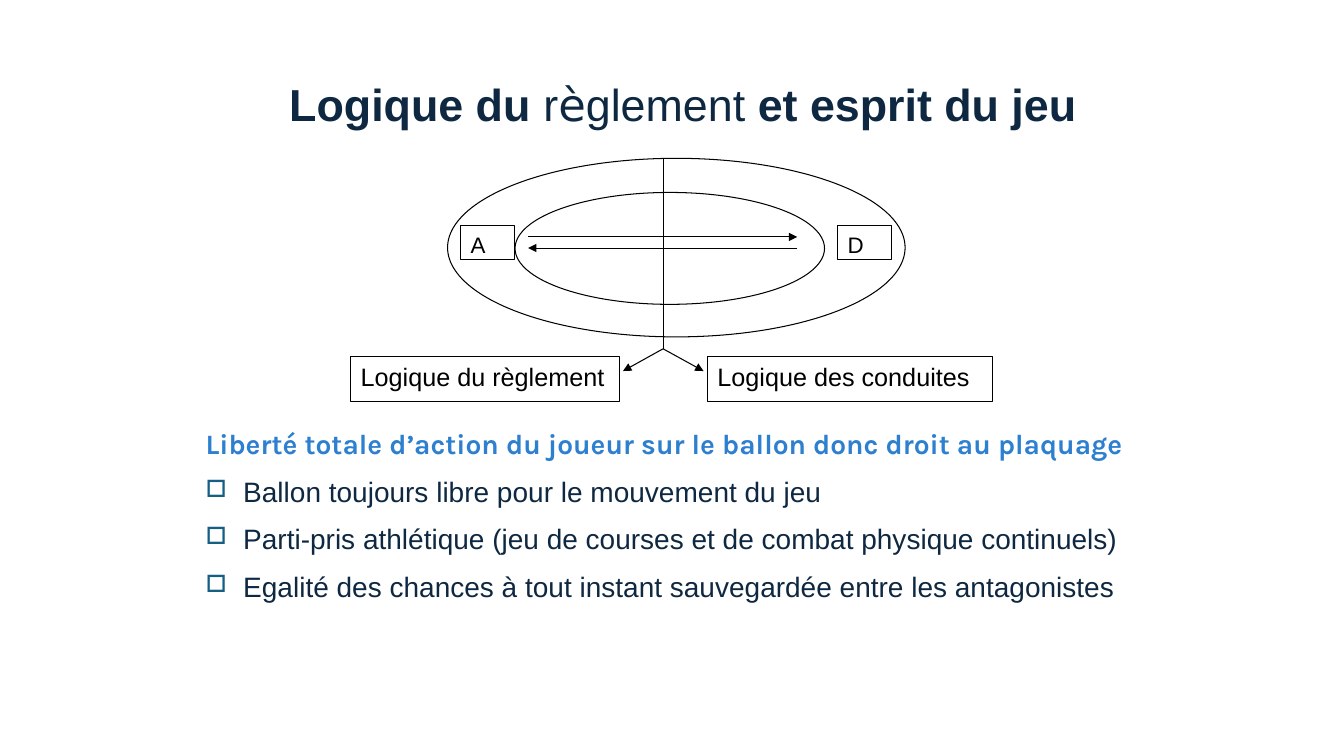
"""Build the slide on the logic of the rules and the spirit of the game."""
import dataclasses
import typing

import lxml.etree
import pptx
import pptx.dml.color
import pptx.enum.shapes
import pptx.oxml.ns
import pptx.util

Cm = pptx.util.Cm
Pt = pptx.util.Pt
RGB = pptx.dml.color.RGBColor
qn = pptx.oxml.ns.qn
SHAPE = pptx.enum.shapes.MSO_SHAPE


@dataclasses.dataclass(frozen=True)
class Theme:
    """Colours, fonts and type sizes of the slide."""
    ink: RGB = RGB(0x0E, 0x28, 0x41)
    accent: RGB = RGB(0x2D, 0x7F, 0xCF)
    bullet: str = "156082"
    black: RGB = RGB(0, 0, 0)
    body_font: str = "Arial"
    heading_font: str = "Karla"
    accent_font: str = "DejaVu Sans"
    title: int = 32
    body: int = 20
    label: int = 18
    letter: int = 16
    line: float = 0.75


THEME = Theme()


class Box(typing.NamedTuple):
    """Place and size in centimetres."""
    left: float
    top: float
    width: float
    height: float


@dataclasses.dataclass(frozen=True)
class Run:
    """A piece of text in one style."""
    text: str
    size: int = THEME.body
    color: RGB = THEME.ink
    font: str = THEME.body_font
    bold: bool = False


@dataclasses.dataclass(frozen=True)
class Outline:
    """An outlined shape, with a label if it has one."""
    box: Box
    kind: SHAPE = SHAPE.RECTANGLE
    label: str = ""
    size: int = THEME.label


class Stroke(typing.NamedTuple):
    """A straight line, with an arrowhead at its end if wanted."""
    x1: float
    y1: float
    x2: float
    y2: float
    arrow: bool = True


@dataclasses.dataclass(frozen=True)
class Statement:
    """A line of the text below the diagram."""
    run: Run
    bulleted: bool = True


JUNCTION_X, JUNCTION_Y = 16.71, 8.79
ARM_Y = 9.35
FIELD_TOP = 3.99
LETTER_TOP = 5.69
LABEL_TOP = 8.99
PASS_LEFT, PASS_RIGHT = 13.31, 20.09
STATEMENTS_TOP, STATEMENT_PITCH = 10.72, 1.2

TITLE = [
    Run("Logique du ", THEME.title, bold=True),
    Run("r", THEME.title),
    Run("è", THEME.title, font=THEME.accent_font),
    Run("glement", THEME.title),
    Run(" et esprit du jeu", THEME.title, bold=True),
]

OUTLINES = [
    Outline(Box(11.28, FIELD_TOP, 11.53, 4.5), SHAPE.OVAL),
    Outline(Box(12.98, 4.85, 7.8, 2.82), SHAPE.OVAL),
    Outline(Box(11.61, LETTER_TOP, 1.35, 0.84), label="A", size=THEME.letter),
    Outline(Box(21.11, LETTER_TOP, 1.35, 0.84), label="D", size=THEME.letter),
    Outline(Box(8.84, LABEL_TOP, 6.78, 1.12), label="Logique du règlement"),
    Outline(Box(17.83, LABEL_TOP, 7.19, 1.12), label="Logique des conduites"),
]

STROKES = [
    Stroke(PASS_LEFT, 5.97, PASS_RIGHT, 5.97),
    Stroke(PASS_RIGHT, 6.25, PASS_LEFT, 6.25),
    Stroke(JUNCTION_X, FIELD_TOP, JUNCTION_X, JUNCTION_Y, arrow=False),
    Stroke(JUNCTION_X, JUNCTION_Y, 15.7, ARM_Y),
    Stroke(JUNCTION_X, JUNCTION_Y, 17.73, ARM_Y),
]

STATEMENTS = [
    Statement(Run("Liberté totale d’action du joueur sur le ballon donc droit au plaquage",
                  color=THEME.accent, font=THEME.heading_font, bold=True), bulleted=False),
    Statement(Run("Ballon toujours libre pour le mouvement du jeu")),
    Statement(Run("Parti-pris athlétique (jeu de courses et de combat physique continuels)")),
    Statement(Run("Egalité des chances à tout instant sauvegardée entre les antagonistes")),
]


def add_run(p: typing.Any, run: Run) -> None:
    """Append one styled run to a paragraph."""
    r = p.add_run()
    r.text = run.text
    r.font.size = Pt(run.size)
    r.font.name = run.font
    r.font.bold = run.bold
    r.font.color.rgb = run.color


def add_text(s: typing.Any, box: Box, runs: list[Run]) -> typing.Any:
    """Add a wrapped text box and return its paragraph."""
    tf = s.shapes.add_textbox(*map(Cm, box)).text_frame
    tf.word_wrap = True
    p = tf.paragraphs[0]
    for run in runs:
        add_run(p, run)
    return p


def add_bullet(p: typing.Any) -> None:
    """Give a paragraph a hanging square bullet."""
    pPr = p._p.get_or_add_pPr()
    pPr.set("marL", str(Cm(0.95)))
    pPr.set("indent", str(-Cm(0.95)))
    color = lxml.etree.SubElement(pPr, qn("a:buClr"))
    lxml.etree.SubElement(color, qn("a:srgbClr"), val=THEME.bullet)
    lxml.etree.SubElement(pPr, qn("a:buSzPct"), val="85000")
    lxml.etree.SubElement(pPr, qn("a:buChar"), char="□")


def add_statement(s: typing.Any, statement: Statement, row: int) -> None:
    """Add one statement at its row below the diagram."""
    top = STATEMENTS_TOP + row * STATEMENT_PITCH
    p = add_text(s, Box(4.93, top, 25.1, STATEMENT_PITCH), [statement.run])
    p.line_spacing = 0.9
    if statement.bulleted:
        add_bullet(p)


def add_outline(s: typing.Any, outline: Outline) -> None:
    """Add an unfilled shape and its label."""
    sp = s.shapes.add_shape(outline.kind, *map(Cm, outline.box))
    sp.shadow.inherit = False
    sp.fill.background()
    sp.line.color.rgb = THEME.black
    sp.line.width = Pt(THEME.line)
    if outline.label:
        tf = sp.text_frame
        tf.word_wrap = True
        tf.vertical_anchor = pptx.enum.text.MSO_ANCHOR.TOP
        p = tf.paragraphs[0]
        p.alignment = pptx.enum.text.PP_ALIGN.LEFT
        add_run(p, Run(outline.label, outline.size, THEME.black))


def add_stroke(s: typing.Any, stroke: Stroke) -> None:
    """Add a straight line, with its arrowhead if it has one."""
    ends = map(Cm, stroke[:4])
    line = s.shapes.add_connector(pptx.enum.shapes.MSO_CONNECTOR.STRAIGHT, *ends)
    line.line.color.rgb = THEME.black
    line.line.width = Pt(THEME.line)
    if stroke.arrow:
        lxml.etree.SubElement(line.line._get_or_add_ln(), qn("a:tailEnd"), type="triangle")
    lxml.etree.SubElement(line._element.spPr, qn("a:effectLst"))


def main() -> None:
    """Build and save the slide."""
    prs = pptx.Presentation()
    prs.slide_width, prs.slide_height = Cm(33.87), Cm(19.05)
    s = prs.slides.add_slide(prs.slide_layouts[6])
    for row, statement in enumerate(STATEMENTS):
        add_statement(s, statement, row)
    for outline in OUTLINES:
        add_outline(s, outline)
    for stroke in STROKES:
        add_stroke(s, stroke)
    add_text(s, Box(7.04, 1.8, 20.9, 1.6), TITLE)
    prs.save("out.pptx")


if __name__ == "__main__":
    main()
